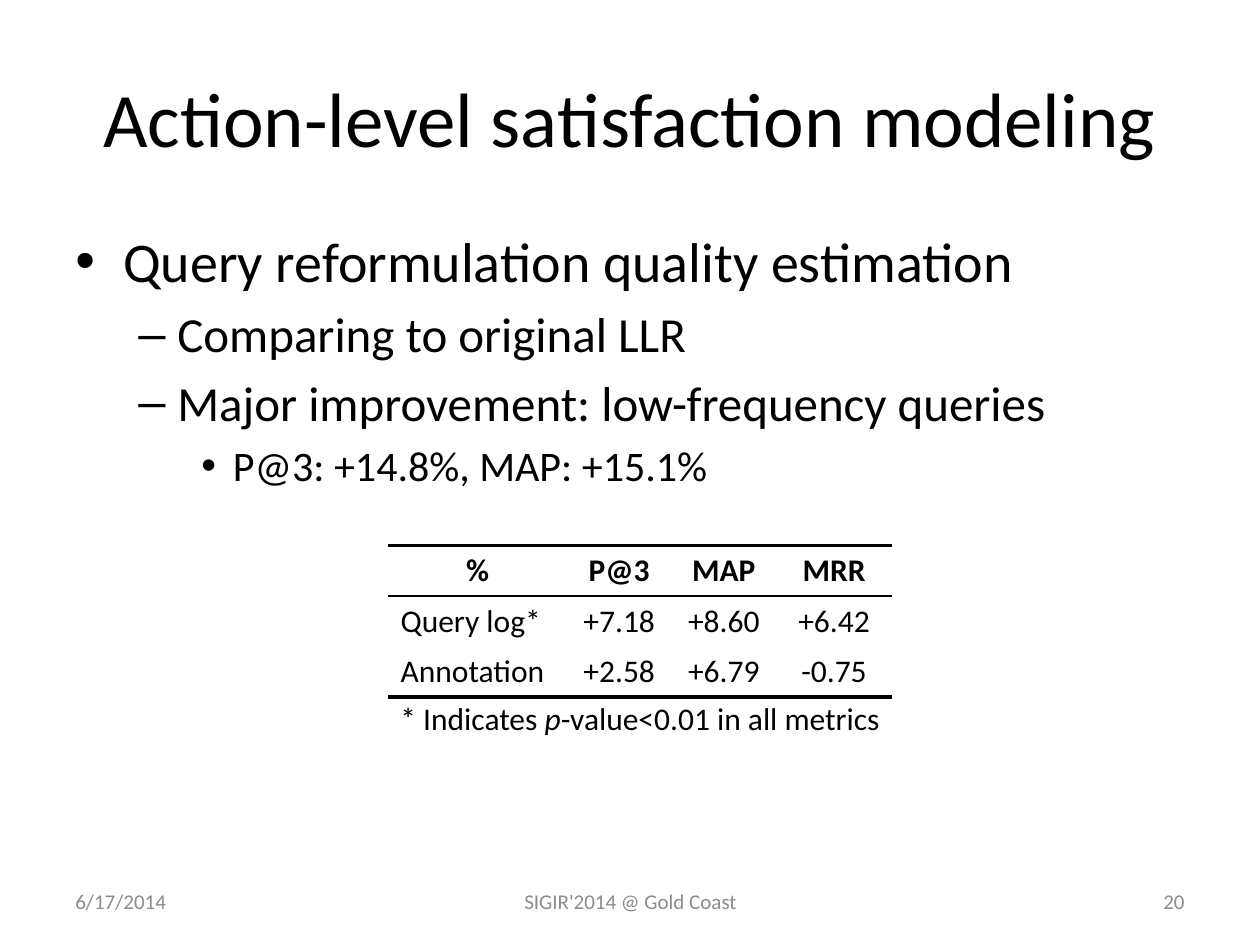
from lxml.etree import SubElement
from pptx import Presentation
from pptx.dml.color import RGBColor
from pptx.enum.text import MSO_ANCHOR as ANCHOR, PP_ALIGN as ALIGN
from pptx.oxml import parse_xml
from pptx.oxml.ns import nsdecls, qn
from pptx.util import Emu, Pt

BLACK, GRAY = "000000", "8C8C8C"
TITLE = "Action-level satisfaction modeling"
BULLETS = [
    (0, "Query reformulation quality estimation"),
    (1, "Comparing to original LLR"),
    (1, "Major improvement: low-frequency queries"),
    (2, "P@3: +14.8%, MAP: +15.1%"),
]
LEVELS = [
    dict(size=32, left=38, hang=38, mark="•"),
    dict(size=28, left=81, hang=31, mark="–"),
    dict(size=24, left=125, hang=25, mark="•"),
]
ROWS = [
    ("%", "P@3", "MAP", "MRR"),
    ("Query log*", "+7.18", "+8.60", "+6.42"),
    ("Annotation", "+2.58", "+6.79", "-0.75"),
]
COLUMNS = [142, 83, 83, 92]
ROW_HEIGHT = 40
RULES = [{"lnT": 2.25, "lnB": 1}, {"lnT": 1}, {"lnB": 2.25}]
NOTE = [("* Indicates ", False), ("p", True), ("-value<0.01 in all metrics", False)]
FOOTERS = [
    ("6/17/2014", 50, 233, ALIGN.LEFT),
    ("SIGIR'2014 @ Gold Coast", 342, 317, ALIGN.CENTER),
    ("20", 717, 233, ALIGN.RIGHT),
]


def px(n):
    return Emu(n * 9144)


def add_run(p, text, size, color=BLACK, **formats):
    r = p.add_run()
    r.text = text
    r.font.color.rgb = RGBColor.from_string(color)
    for name, value in dict(name="Calibri", size=Pt(size), **formats).items():
        setattr(r.font, name, value)


def add_box(s, box, anchor=ANCHOR.TOP, wrap=True):
    tf = s.shapes.add_textbox(*map(px, box)).text_frame
    tf.word_wrap = wrap
    tf.vertical_anchor = anchor
    return tf


def add_line(s, box, text, size, align, color=BLACK):
    p = add_box(s, box, ANCHOR.MIDDLE).paragraphs[0]
    p.alignment = align
    add_run(p, text, size, color)


def add_bullets(s, box):
    tf = add_box(s, box)
    for i, (level, text) in enumerate(BULLETS):
        style = LEVELS[level]
        p = tf.paragraphs[0] if i == 0 else tf.add_paragraph()
        p.level = level
        p.space_before = Pt(style["size"] * 0.2)
        add_run(p, text, style["size"])
        pPr = p._p.get_or_add_pPr()
        pPr.set("marL", str(px(style["left"])))
        pPr.set("indent", str(-px(style["hang"])))
        SubElement(pPr, qn("a:buFont"), typeface="Arial")
        SubElement(pPr, qn("a:buChar"), char=style["mark"])


def set_borders(cell, rules):
    tcPr = cell._tc.get_or_add_tcPr()
    for i, tag in enumerate(("lnL", "lnR", "lnT", "lnB")):
        width = rules.get(tag, 0)
        fill = f'<a:solidFill><a:srgbClr val="{BLACK}"/></a:solidFill>' if width else "<a:noFill/>"
        tcPr.insert(i, parse_xml(f'<a:{tag} {nsdecls("a")} w="{Pt(width)}">{fill}</a:{tag}>'))


def add_metrics(s, left, top):
    box = (left, top, sum(COLUMNS), ROW_HEIGHT * len(ROWS))
    table = s.shapes.add_table(len(ROWS), len(COLUMNS), *map(px, box)).table
    table.first_row = table.horz_banding = False
    for column, width in zip(table.columns, COLUMNS):
        column.width = px(width)
    for i, row in enumerate(ROWS):
        for j, text in enumerate(row):
            cell = table.cell(i, j)
            cell.fill.background()
            cell.vertical_anchor = ANCHOR.MIDDLE
            p = cell.text_frame.paragraphs[0]
            p.alignment = ALIGN.LEFT if i and j == 0 else ALIGN.CENTER
            add_run(p, text, 18, bold=i == 0)
            set_borders(cell, RULES[i])


def main():
    prs = Presentation()
    prs.slide_width, prs.slide_height = px(1000), px(750)
    s = prs.slides.add_slide(prs.slide_layouts[6])
    add_line(s, (50, 30, 900, 125), TITLE, 44, ALIGN.CENTER)
    add_bullets(s, (50, 175, 900, 495))
    add_metrics(s, 308, 433)
    note = add_box(s, (308, 550, 405, 40), wrap=False).paragraphs[0]
    for text, italic in NOTE:
        add_run(note, text, 18, italic=italic)
    for text, left, width, align in FOOTERS:
        add_line(s, (left, 695, width, 40), text, 12, align, GRAY)
    prs.save("out.pptx")


if __name__ == "__main__":
    main()
